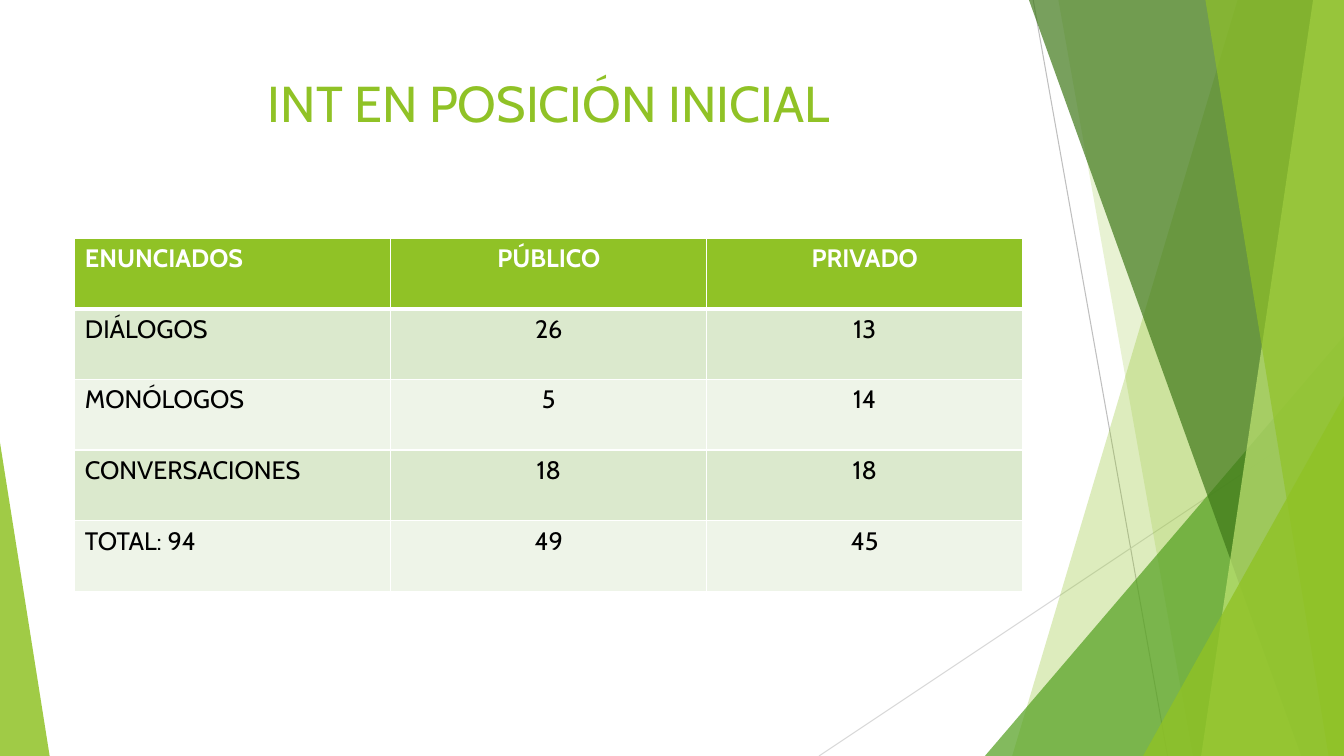
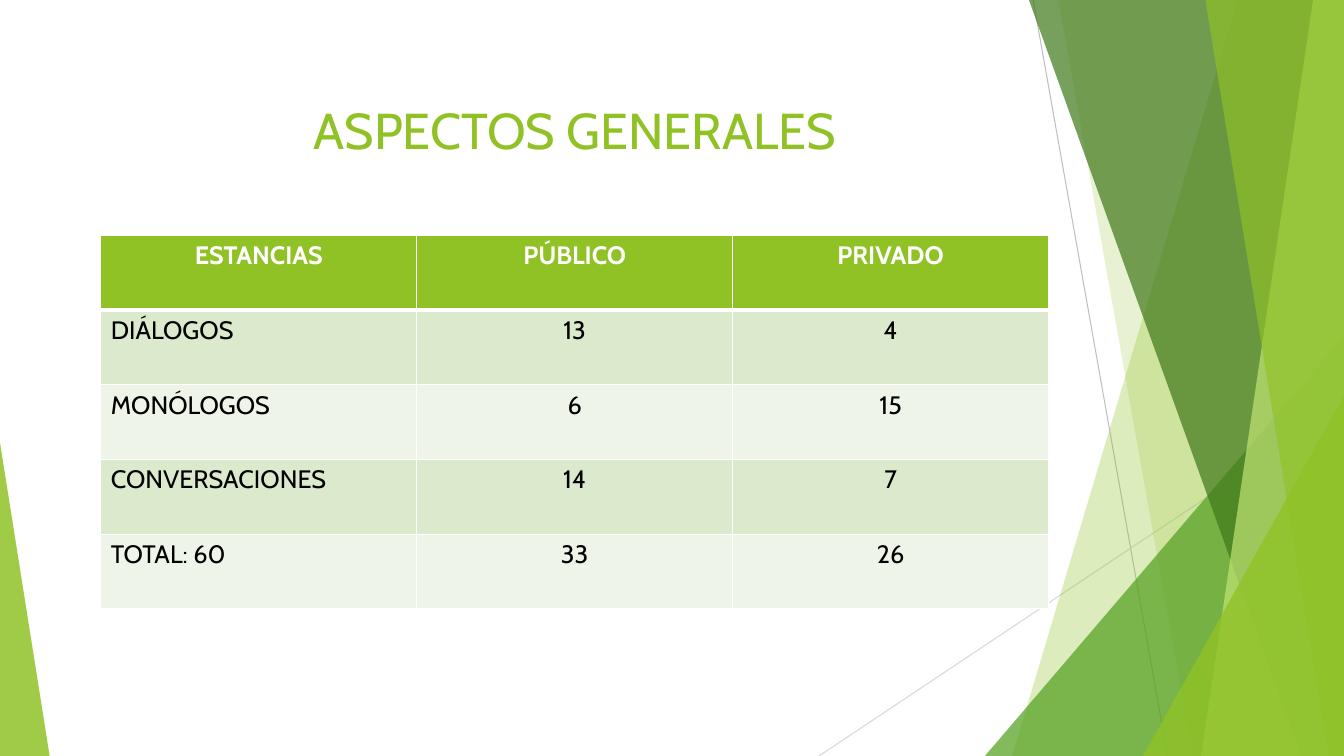
from lxml.etree import SubElement
from pptx import Presentation
from pptx.dml.color import RGBColor
from pptx.enum.shapes import MSO_CONNECTOR, MSO_SHAPE
from pptx.enum.text import MSO_ANCHOR, PP_ALIGN
from pptx.oxml.ns import qn
from pptx.util import Pt

WIDTH, HEIGHT = 960, 540
FONT = "Cabin"

WHITE = RGBColor(0xFF, 0xFF, 0xFF)
BLACK = RGBColor(0x00, 0x00, 0x00)
LIME = RGBColor(0x90, 0xC2, 0x26)
LIGHT_LIME = RGBColor(0xC0, 0xE4, 0x74)
GREEN = RGBColor(0x54, 0xA0, 0x21)
DARK_GREEN = RGBColor(0x3F, 0x78, 0x19)
BAND_DARK = RGBColor(0xDB, 0xE9, 0xCD)
BAND_LIGHT = RGBColor(0xEE, 0xF4, 0xE8)
GREY = RGBColor(0xBF, 0xBF, 0xBF)
LIGHT_GREY = RGBColor(0xD9, 0xD9, 0xD9)


class Deck:
    def __init__(self):
        self.prs = Presentation()
        self.prs.slide_width = Pt(WIDTH)
        self.prs.slide_height = Pt(HEIGHT)
        self.s = None

    def slide(self):
        self.s = self.prs.slides.add_slide(self.prs.slide_layouts[6])
        self.facets()

    def facets(self):
        """Draw the green decoration shared by all slides."""
        self.line(738, 0, 834, HEIGHT, GREY)
        self.line(WIDTH, 290, 585, HEIGHT, LIGHT_GREY)
        self.shard(884, 723, LIME, 30)
        self.shard(756, 852, LIME, 20)
        self.triangle(703.5, 240, WIDTH, 1, GREEN, 72)
        self.shard(735, 929.5, DARK_GREEN, 70)
        self.shard(938, 858, LIGHT_LIME, 70)
        self.shard(861, 949, LIME, 65)
        self.triangle(816.5, 283, WIDTH, 1, LIME, 80)
        self.triangle(0, 316, 35.5, 0, LIME, 85)

    def line(self, x1, y1, x2, y2, color):
        line = self.s.shapes.add_connector(
            MSO_CONNECTOR.STRAIGHT, Pt(x1), Pt(y1), Pt(x2), Pt(y2))
        line.line.color.rgb = color
        line.line.width = Pt(0.75)
        SubElement(line._element.spPr, qn("a:effectLst"))

    def shard(self, top_x, bottom_x, color, opacity):
        """Fill from a slanted edge to the right side of the slide."""
        builder = self.s.shapes.build_freeform(Pt(top_x), 0)
        corners = [(WIDTH, 0), (WIDTH, HEIGHT), (bottom_x, HEIGHT)]
        builder.add_line_segments([(Pt(x), Pt(y)) for x, y in corners])
        self.paint(builder.convert_to_shape(), color, opacity)

    def triangle(self, left, top, right, apex, color, opacity):
        """Stand a triangle on the bottom edge; apex is 0 (left) to 1 (right)."""
        sp = self.s.shapes.add_shape(
            MSO_SHAPE.ISOSCELES_TRIANGLE,
            Pt(left), Pt(top), Pt(right - left), Pt(HEIGHT - top))
        sp.adjustments[0] = apex
        self.paint(sp, color, opacity)

    def paint(self, sp, color, opacity):
        sp.shadow.inherit = False
        sp.line.fill.background()
        sp.fill.solid()
        sp.fill.fore_color.rgb = color
        rgb = sp._element.spPr.find(qn("a:solidFill"))[0]
        SubElement(rgb, qn("a:alpha"), val=str(opacity * 1000))

    def set_text(self, tf, text, size, color, align, bold=False):
        p = tf.paragraphs[0]
        p.text = text
        p.alignment = align
        p.font.name = FONT
        p.font.size = Pt(size)
        p.font.bold = bold
        p.font.color.rgb = color

    def title(self, text, left, top, width):
        tf = self.s.shapes.add_textbox(
            Pt(left), Pt(top), Pt(width), Pt(56)).text_frame
        tf.word_wrap = True
        tf.vertical_anchor = MSO_ANCHOR.TOP
        self.set_text(tf, text, 36, LIME, PP_ALIGN.CENTER)

    def border(self, cell, side, width):
        ln = SubElement(cell._tc.get_or_add_tcPr(), qn(f"a:ln{side}"),
                        w=str(int(Pt(width))))
        fill = SubElement(ln, qn("a:solidFill"))
        SubElement(fill, qn("a:srgbClr"), val=str(WHITE))

    def table(self, rows, left, top, width, row_height, head_align):
        """Add a table; head_align places the first header cell."""
        table = self.s.shapes.add_table(
            len(rows), len(rows[0]), Pt(left), Pt(top),
            Pt(width), Pt(row_height * len(rows))).table
        for i, row in enumerate(rows):
            head = i == 0
            fill = LIME if head else BAND_DARK if i % 2 else BAND_LIGHT
            for j, text in enumerate(row):
                cell = table.cell(i, j)
                for side in "LRTB":
                    under_head = (i, side) in ((0, "B"), (1, "T"))
                    self.border(cell, side, 3 if under_head else 1)
                cell.fill.solid()
                cell.fill.fore_color.rgb = fill
                align = PP_ALIGN.CENTER
                if j == 0:
                    align = head_align if head else PP_ALIGN.LEFT
                self.set_text(cell.text_frame, text, 18,
                              WHITE if head else BLACK, align, head)


def main():
    deck = Deck()
    width = 677

    deck.slide()
    deck.title("INT EN POSICIÓN INICIAL", 53.5, 48, width)
    deck.table([
        ("ENUNCIADOS", "PÚBLICO", "PRIVADO"),
        ("DIÁLOGOS", "26", "13"),
        ("MONÓLOGOS", "5", "14"),
        ("CONVERSACIONES", "18", "18"),
        ("TOTAL: 94", "49", "45"),
    ], 53.5, 170, width, 50.5, PP_ALIGN.LEFT)

    deck.slide()
    deck.title("ASPECTOS GENERALES", 72, 67, width)
    deck.table([
        ("ESTANCIAS", "PÚBLICO", "PRIVADO"),
        ("DIÁLOGOS", "13", "4"),
        ("MONÓLOGOS", "6", "15"),
        ("CONVERSACIONES", "14", "7"),
        ("TOTAL: 60", "33", "26"),
    ], 72, 168, width, 53.4, PP_ALIGN.CENTER)

    deck.prs.save("out.pptx")


if __name__ == "__main__":
    main()
